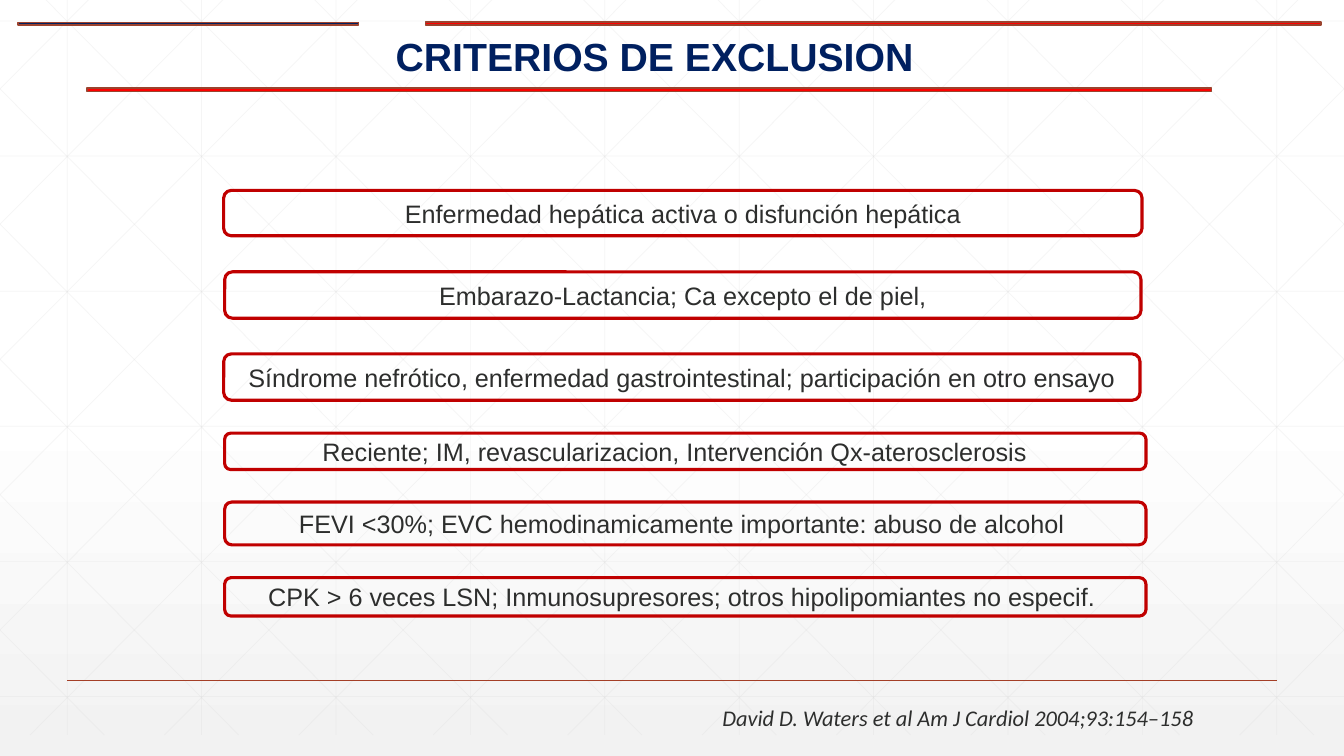
"""Build the slide on exclusion criteria with its faint grid background."""
from dataclasses import dataclass

from pptx import Presentation
from pptx.dml.color import RGBColor
from pptx.enum.shapes import MSO_CONNECTOR, MSO_SHAPE
from pptx.enum.text import MSO_ANCHOR, PP_ALIGN
from pptx.oxml.ns import qn
from pptx.slide import Slide
from pptx.text.text import TextFrame
from pptx.util import Pt

WIDTH, HEIGHT = 960, 540
COLORS = {
    "white": "FFFFFF", "mist": "F2F2F2", "grid": "D9D9D9", "rust": "A43F27",
    "brick": "9B432E", "navy": "002060", "red": "FF0000",
    "crimson": "C00000", "ink": "2D2E2D",
}
TITLE_FORMAT = {"name": "Arial", "size": Pt(28), "bold": True}
CRITERION_FORMAT = {"name": "Arial", "size": Pt(18)}
SOURCE_FORMAT = {"name": "Calibri", "size": Pt(16), "italic": True}

GRID_TOP, GRID_BOTTOM = -15, 525
GRID_STEP = 96
ROW_STEP = 96.5
DIAGONAL_START, DIAGONAL_RUN = 18, 536.5


@dataclass
class Box:
    left: float
    top: float
    width: float
    height: float

    def lengths(self) -> tuple:
        return Pt(self.left), Pt(self.top), Pt(self.width), Pt(self.height)


@dataclass
class Bar:
    box: Box
    fill: str


@dataclass
class Criterion:
    text: str
    box: Box
    right_indent: float = 0


BARS = [
    Bar(Box(-31, 13, 331.2, 7.9), "navy"),
    Bar(Box(188.6, 12.2, 870.5, 9.4), "red"),
    Bar(Box(-82.8, 59, 1093, 10.1), "red"),
]
CRITERIA = [
    Criterion("Enfermedad hepática activa o disfunción hepática",
              Box(159.8, 136, 656, 32.4)),
    Criterion("Embarazo-Lactancia; Ca excepto el de piel,",
              Box(160.5, 194.2, 654.5, 33.1)),
    Criterion("Síndrome nefrótico, enfermedad gastrointestinal; participación en otro ensayo",
              Box(159.8, 252.8, 654.5, 33.1)),
    Criterion("Reciente; IM, revascularizacion, Intervención Qx-aterosclerosis",
              Box(160.5, 309.4, 658.1, 26), 15),
    Criterion("FEVI <30%; EVC hemodinamicamente importante: abuso de alcohol",
              Box(160.5, 358.6, 658.1, 30.6), 5),
    Criterion("CPK > 6 veces LSN; Inmunosupresores; otros hipolipomiantes no especif.",
              Box(160.5, 412.6, 658.1, 27.4), 5),
]


def color(name: str) -> RGBColor:
    return RGBColor.from_string(COLORS[name])


def write(frame: TextFrame, text: str, format_values: dict, ink: str, align: PP_ALIGN) -> None:
    para = frame.paragraphs[0]
    para.alignment = align
    span = para.add_run()
    span.text = text
    for name, value in format_values.items():
        setattr(span.font, name, value)
    span.font.color.rgb = color(ink)


def draw_line(page: Slide, start: tuple, end: tuple, ink: str, weight: float,
              opacity: int = 100) -> None:
    points = [Pt(value) for value in (*start, *end)]
    line = page.shapes.add_connector(MSO_CONNECTOR.STRAIGHT, *points)
    line.line.color.rgb = color(ink)
    line.line.width = Pt(weight)
    properties = line._element.spPr
    if opacity < 100:
        tint = next(properties.iter(qn("a:srgbClr")))
        alpha = tint.makeelement(qn("a:alpha"), {"val": str(opacity * 1000)})
        tint.append(alpha)
    properties.append(properties.makeelement(qn("a:effectLst"), {}))


def draw_background(page: Slide) -> None:
    fill = page.background.fill
    fill.gradient()
    fill.gradient_angle = 270
    for stop, (position, name) in zip(fill.gradient_stops, [(0.53, "white"), (1, "mist")]):
        stop.position = position
        stop.color.rgb = color(name)


def diagonal(index: int) -> tuple:
    """Return the ends of a falling diagonal, cut at the slide's sides."""
    start = DIAGONAL_START + index * GRID_STEP
    slope = (GRID_BOTTOM - GRID_TOP) / DIAGONAL_RUN
    left, right = max(start, 0), min(start + DIAGONAL_RUN, WIDTH)
    return tuple((x, GRID_TOP + (x - start) * slope) for x in (left, right))


def draw_grid(page: Slide) -> None:
    columns = [GRID_STEP / 2 + index * GRID_STEP for index in range(10)]
    rows = [15 + index * ROW_STEP for index in range(6)]
    lines = [((x, GRID_TOP), (x, GRID_BOTTOM)) for x in columns]
    lines += [((0, y), (WIDTH, y)) for y in rows]
    falling = [diagonal(index) for index in range(-5, 10)]
    lines += falling
    lines += [tuple((WIDTH - x, y) for x, y in ends) for ends in falling]
    for start, end in lines:
        draw_line(page, start, end, "grid", 0.5, 25)


def draw_text(page: Slide, text: str, box: Box, format_values: dict, ink: str,
              align: PP_ALIGN, wrap: bool) -> None:
    frame = page.shapes.add_textbox(*box.lengths()).text_frame
    frame.word_wrap = wrap
    write(frame, text, format_values, ink, align)


def draw_bar(page: Slide, bar: Bar) -> None:
    shape = page.shapes.add_shape(MSO_SHAPE.MATH_MINUS, *bar.box.lengths())
    shape.shadow.inherit = False
    shape.fill.solid()
    shape.fill.fore_color.rgb = color(bar.fill)
    shape.line.color.rgb = color("brick")
    shape.line.width = Pt(1)


def draw_criterion(page: Slide, criterion: Criterion) -> None:
    shape = page.shapes.add_shape(MSO_SHAPE.ROUNDED_RECTANGLE, *criterion.box.lengths())
    shape.shadow.inherit = False
    shape.fill.background()
    shape.line.color.rgb = color("crimson")
    shape.line.width = Pt(2.25)
    frame = shape.text_frame
    frame.word_wrap = True
    frame.vertical_anchor = MSO_ANCHOR.MIDDLE
    frame.margin_right = Pt(7.2 + criterion.right_indent)
    write(frame, criterion.text, CRITERION_FORMAT, "ink", PP_ALIGN.CENTER)


def main() -> None:
    deck = Presentation()
    deck.slide_width, deck.slide_height = Pt(WIDTH), Pt(HEIGHT)
    page = deck.slides.add_slide(deck.slide_layouts[6])
    draw_background(page)
    draw_grid(page)
    draw_line(page, (48, 486), (912, 486), "rust", 1)
    draw_text(page, "CRITERIOS DE EXCLUSION", Box(209, 19.4, 517, 41),
              TITLE_FORMAT, "navy", PP_ALIGN.CENTER, True)
    draw_text(page, "David D. Waters et al Am J Cardiol 2004;93:154–158",
              Box(509, 499.7, 367.2, 26.6), SOURCE_FORMAT, "ink", PP_ALIGN.LEFT, False)
    for criterion in CRITERIA:
        draw_criterion(page, criterion)
    for bar in BARS:
        draw_bar(page, bar)
    deck.save("out.pptx")


if __name__ == "__main__":
    main()
